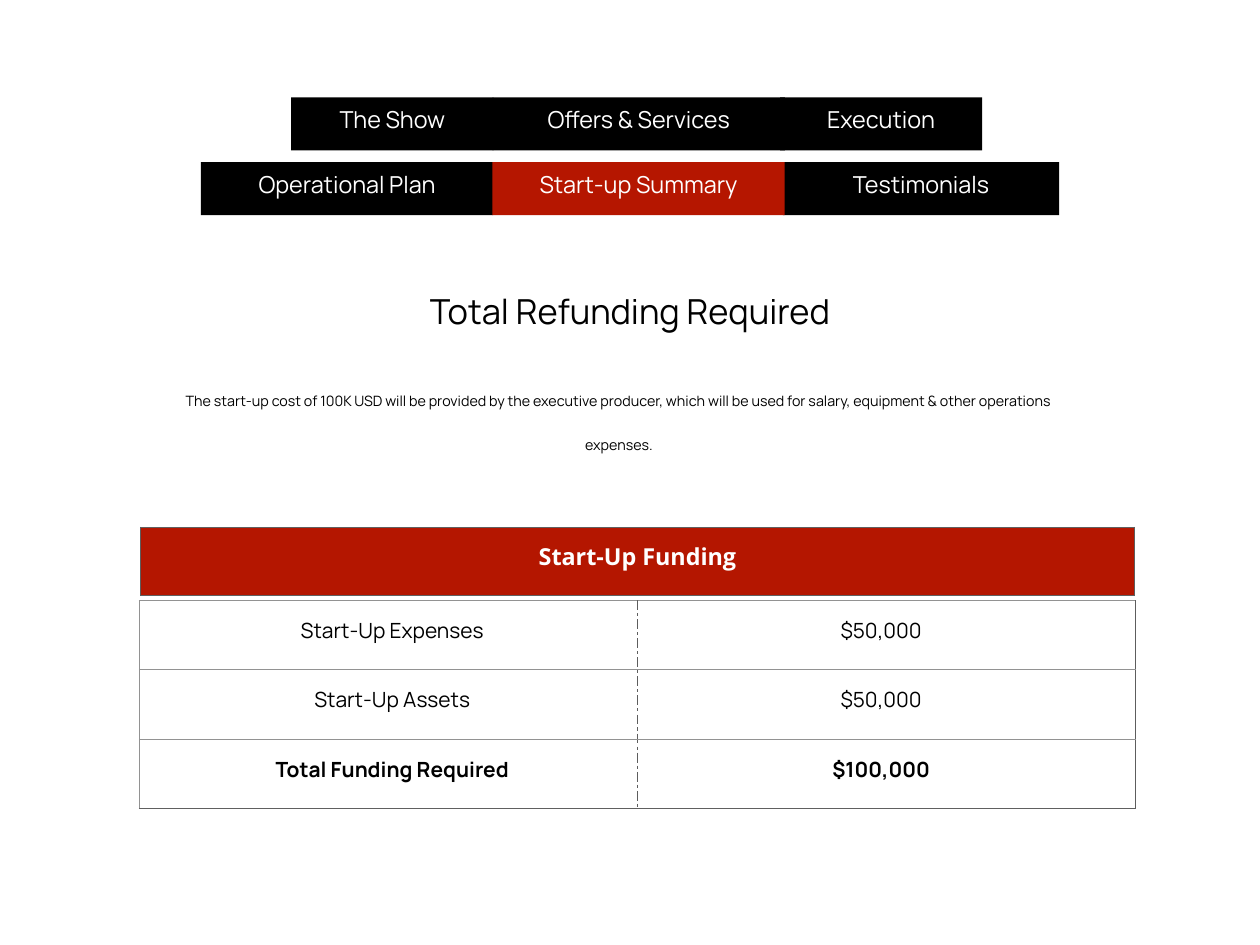
"""Build the start-up funding slide with its navigation bar and funding table."""
from dataclasses import dataclass

from lxml import etree
from pptx import Presentation
from pptx.dml.color import RGBColor
from pptx.enum.shapes import MSO_SHAPE
from pptx.enum.text import MSO_ANCHOR, PP_ALIGN
from pptx.oxml.ns import qn
from pptx.slide import Slide
from pptx.table import Table, _Cell
from pptx.text.text import TextFrame
from pptx.util import Pt

CENTER = PP_ALIGN.CENTER
MIDDLE = MSO_ANCHOR.MIDDLE
RECTANGLE = MSO_SHAPE.RECTANGLE


@dataclass(frozen=True)
class Theme:
    black: str = "000000"
    white: str = "FFFFFF"
    active_tab: str = "B51600"
    header: str = "B41600"
    rule: str = "929292"
    edge: str = "5D5D5D"
    outer: str = "606060"
    body_font: str = "Manrope"
    header_font: str = "Open Sans"
    title_size: float = 28
    note_size: float = 20
    tab_size: float = 19
    cell_size: float = 17
    inset: float = 2.2
    tab_lift: float = 7.2


@dataclass(frozen=True)
class Box:
    left: float
    top: float
    width: float
    height: float

    def lengths(self) -> tuple[Pt, Pt, Pt, Pt]:
        return Pt(self.left), Pt(self.top), Pt(self.width), Pt(self.height)


@dataclass(frozen=True)
class Tab:
    label: str
    left: float
    width: float
    row: int
    active: bool = False


@dataclass(frozen=True)
class Funding:
    label: str
    amount: str
    total: bool = False


@dataclass(frozen=True)
class Border:
    color: str
    dash: str = "solid"


THEME = Theme()
TAB_TOP, TAB_PITCH, TAB_HEIGHT = 79.1, 52.6, 43.2
TABS = (
    Tab("The Show", 236.7, 164.2, 0),
    Tab("Execution", 633.9, 164.2, 0),
    Tab("Offers & Services", 400.3, 237.6, 0),
    Tab("Operational Plan", 163.3, 237.6, 1),
    Tab("Testimonials", 636.2, 224.6, 1),
    Tab("Start-up Summary", 400.1, 237.6, 1, active=True),
)
FUNDING = (
    Funding("Start-Up Expenses", "$50,000"),
    Funding("Start-Up Assets", "$50,000"),
    Funding("Total Funding Required", "$100,000", total=True),
)
TITLE_BOX = Box(333.4, 230.9, 357.1, 43.2)
NOTE_BOX = Box(139.5, 308, 727.2, 64.8)
HEADER_BOX = Box(114.5, 428.4, 807.1, 55.4)
HEADING_BOX = Box(416.2, 434.9, 203.8, 33.8)
FUNDING_BOX = Box(113.2, 488, 809.6, 169.2)
ENTRY_TOP, ENTRY_HEIGHT = 495, 33.8
LABEL_LEFT, LABEL_WIDTH = 200, 237.6
AMOUNT_LEFT, AMOUNT_WIDTH = 627.6, 177.1
NOTE = (
    "The start-up cost of 100K USD will be provided by the executive producer, "
    "which will be used for salary, equipment & other operations expenses."
)


def write(frame: TextFrame, text: str, *, size: float, color: str = THEME.black,
          font: str = THEME.body_font, bold: bool = False, spacing: float = 1.0,
          baseline: int = 0, lift: float = 0) -> None:
    frame.word_wrap = True
    frame.vertical_anchor = MIDDLE
    frame.margin_left = frame.margin_right = frame.margin_top = Pt(THEME.inset)
    frame.margin_bottom = Pt(THEME.inset + lift)
    paragraph = frame.paragraphs[0]
    paragraph.alignment = CENTER
    paragraph.line_spacing = spacing
    run = paragraph.add_run()
    run.text = text
    run.font.size = Pt(size)
    run.font.name = font
    run.font.bold = bold
    run.font.color.rgb = RGBColor.from_string(color)
    if baseline:
        run._r.get_or_add_rPr().set("baseline", str(baseline))


def add_frame(slide: Slide, box: Box) -> TextFrame:
    return slide.shapes.add_textbox(*box.lengths()).text_frame


def add_tab(slide: Slide, tab: Tab) -> None:
    box = Box(tab.left, TAB_TOP + tab.row * TAB_PITCH, tab.width, TAB_HEIGHT)
    button = slide.shapes.add_shape(RECTANGLE, *box.lengths())
    button.shadow.inherit = False
    button.fill.solid()
    button.fill.fore_color.rgb = RGBColor.from_string(
        THEME.active_tab if tab.active else THEME.black)
    button.line.fill.background()
    write(button.text_frame, tab.label, size=THEME.tab_size, color=THEME.white,
          lift=THEME.tab_lift)


def add_grid(slide: Slide, box: Box, rows: int, columns: int) -> Table:
    grid = slide.shapes.add_table(rows, columns, *box.lengths()).table
    grid.first_row = grid.horz_banding = False
    for row in grid.rows:
        row.height = Pt(box.height / rows)
    for column in grid.columns:
        column.width = Pt(box.width / columns)
    return grid


def style_cell(cell: _Cell, fill: str, borders: dict[str, Border]) -> None:
    properties = cell._tc.get_or_add_tcPr()
    for side in ("L", "R", "T", "B"):
        border = borders[side]
        line = etree.SubElement(properties, qn(f"a:ln{side}"), w=str(Pt(0.75)))
        solid = etree.SubElement(line, qn("a:solidFill"))
        etree.SubElement(solid, qn("a:srgbClr"), val=border.color)
        etree.SubElement(line, qn("a:prstDash"), val=border.dash)
    cell.fill.solid()
    cell.fill.fore_color.rgb = RGBColor.from_string(fill)


def add_funding(slide: Slide) -> None:
    rule, edge, outer = Border(THEME.rule), Border(THEME.edge), Border(THEME.outer)
    divider = Border(THEME.edge, "dashDot")
    pitch = FUNDING_BOX.height / len(FUNDING)
    grid = add_grid(slide, FUNDING_BOX, len(FUNDING), 2)
    header = add_grid(slide, HEADER_BOX, 1, 1)
    style_cell(header.cell(0, 0), THEME.header,
               {"L": edge, "R": edge, "T": outer, "B": outer})
    write(add_frame(slide, HEADING_BOX), "Start-Up Funding", size=THEME.tab_size,
          color=THEME.white, font=THEME.header_font, bold=True)

    for row, item in enumerate(FUNDING):
        ends = {"T": rule, "B": outer if item.total else rule}
        style_cell(grid.cell(row, 0), THEME.white, {"L": rule, "R": divider, **ends})
        style_cell(grid.cell(row, 1), THEME.white, {"L": divider, "R": edge, **ends})
        top = ENTRY_TOP + row * pitch
        for text, left, width in ((item.label, LABEL_LEFT, LABEL_WIDTH),
                                  (item.amount, AMOUNT_LEFT, AMOUNT_WIDTH)):
            write(add_frame(slide, Box(left, top, width, ENTRY_HEIGHT)), text,
                  size=THEME.cell_size, bold=item.total)


def main() -> None:
    deck = Presentation()
    deck.slide_width, deck.slide_height = Pt(1024), Pt(768)
    slide = deck.slides.add_slide(deck.slide_layouts[6])
    write(add_frame(slide, TITLE_BOX), "Total Refunding Required",
          size=THEME.title_size)
    write(add_frame(slide, NOTE_BOX), NOTE, size=THEME.note_size, spacing=1.5,
          baseline=30000)
    add_funding(slide)
    for tab in TABS:
        add_tab(slide, tab)
    deck.save("out.pptx")


if __name__ == "__main__":
    main()
